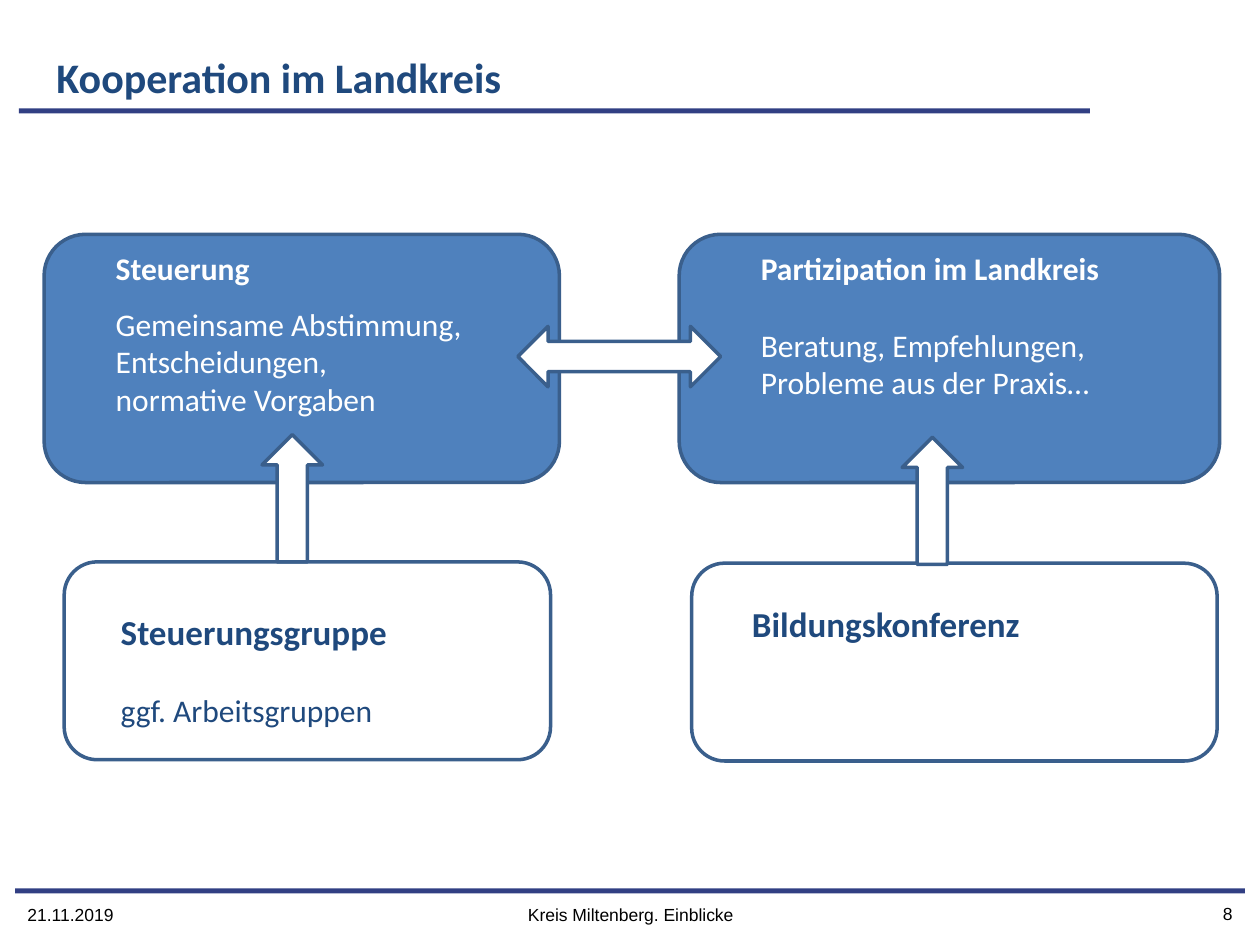
"""Build the slide on cooperation between steering and participation in the district."""
import pptx
import pptx.dml.color
import pptx.enum.shapes
import pptx.enum.text
import pptx.util

Inches = pptx.util.Inches
Pt = pptx.util.Pt
Kind = pptx.enum.shapes.MSO_SHAPE
Align = pptx.enum.text.PP_ALIGN
Anchor = pptx.enum.text.MSO_ANCHOR

theme = {
    "bar": "313F83", "box": "4F81BD", "edge": "3A5F8C",
    "navy": "1F497D", "white": "FFFFFF", "black": "000000",
    "title": 24, "head": 20, "body": 18, "foot": 10, "line": 2,
}


def color(name):
    return pptx.dml.color.RGBColor.from_string(theme[name])


def write(place, lines, tone, face="Calibri", align=Align.LEFT, anchor=Anchor.TOP):
    box = slide.shapes.add_textbox(*map(Inches, place))
    frame = box.text_frame
    frame.word_wrap = True
    frame.vertical_anchor = anchor
    for index, (text, size, bold, gap) in enumerate(lines):
        para = frame.paragraphs[0] if index == 0 else frame.add_paragraph()
        para.alignment = align
        if gap:
            para.space_before = Pt(gap)
        run = para.add_run()
        run.text = text
        style = {"name": face, "size": Pt(theme[size]), "bold": bold}
        for key, value in style.items():
            setattr(run.font, key, value)
        run.font.color.rgb = color(tone)


deck = pptx.Presentation()
deck.slide_width = Inches(10)
deck.slide_height = Inches(7.5)
slide = deck.slides.add_slide(deck.slide_layouts[6])

shapes = [
    (Kind.RECTANGLE, (0.15, 0.86, 8.5, 0.04), "bar", None),
    (Kind.RECTANGLE, (0.12, 7.05, 9.76, 0.04), "bar", None),
    (Kind.ROUNDED_RECTANGLE, (0.35, 1.86, 4.09, 1.97), "box", "edge"),
    (Kind.ROUNDED_RECTANGLE, (5.39, 1.86, 4.29, 1.97), "box", "edge"),
    (Kind.ROUNDED_RECTANGLE, (5.49, 4.47, 4.17, 1.57), None, "edge"),
    (Kind.ROUNDED_RECTANGLE, (0.51, 4.46, 3.86, 1.57), None, "edge"),
    (Kind.LEFT_RIGHT_ARROW, (4.11, 2.59, 1.61, 0.48), "white", "edge"),
    (Kind.UP_ARROW, (2.08, 3.45, 0.48, 1.01), "white", "edge"),
    (Kind.UP_ARROW, (7.16, 3.47, 0.48, 1.01), "white", "edge"),
]
for kind, place, fill, edge in shapes:
    shape = slide.shapes.add_shape(kind, *map(Inches, place))
    shape.shadow.inherit = False
    if fill:
        shape.fill.solid()
        shape.fill.fore_color.rgb = color(fill)
    else:
        shape.fill.background()
    if edge:
        shape.line.color.rgb = color(edge)
        shape.line.width = Pt(theme["line"])
    else:
        shape.line.fill.background()

texts = [
    ((0.35, 0.36, 9.13, 0.5), "navy", [("Kooperation im Landkreis", "title", True, 0)]),
    ((0.82, 1.93, 3.04, 1.45), "white", [
        ("Steuerung", "body", True, 0),
        ("Gemeinsame Abstimmung,", "body", False, 10),
        ("Entscheidungen,", "body", False, 0),
        ("normative Vorgaben", "body", False, 0),
    ]),
    ((5.94, 1.93, 3.39, 1.31), "white", [
        ("Partizipation im Landkreis", "body", True, 0),
        ("Beratung, Empfehlungen, Probleme aus der Praxis…", "body", False, 22),
    ]),
    ((0.86, 4.8, 3.15, 1.04), "navy", [
        ("Steuerungsgruppe", "head", True, 0),
        ("ggf. Arbeitsgruppen", "body", False, 22),
    ]),
    ((5.87, 4.73, 3.23, 0.44), "navy", [("Bildungskonferenz", "head", True, 0)]),
]
for place, tone, lines in texts:
    write(place, lines, tone)

footers = [
    ((0.12, 7.06, 2.33, 0.4), "21.11.2019", Align.LEFT),
    ((3.42, 7.06, 3.17, 0.4), "Kreis Miltenberg. Einblicke", Align.CENTER),
    ((7.55, 7.05, 2.33, 0.4), "8", Align.RIGHT),
]
for place, text, align in footers:
    write(place, [(text, "foot", False, 0)], "black", "Arial", align, Anchor.MIDDLE)

deck.save("out.pptx")
